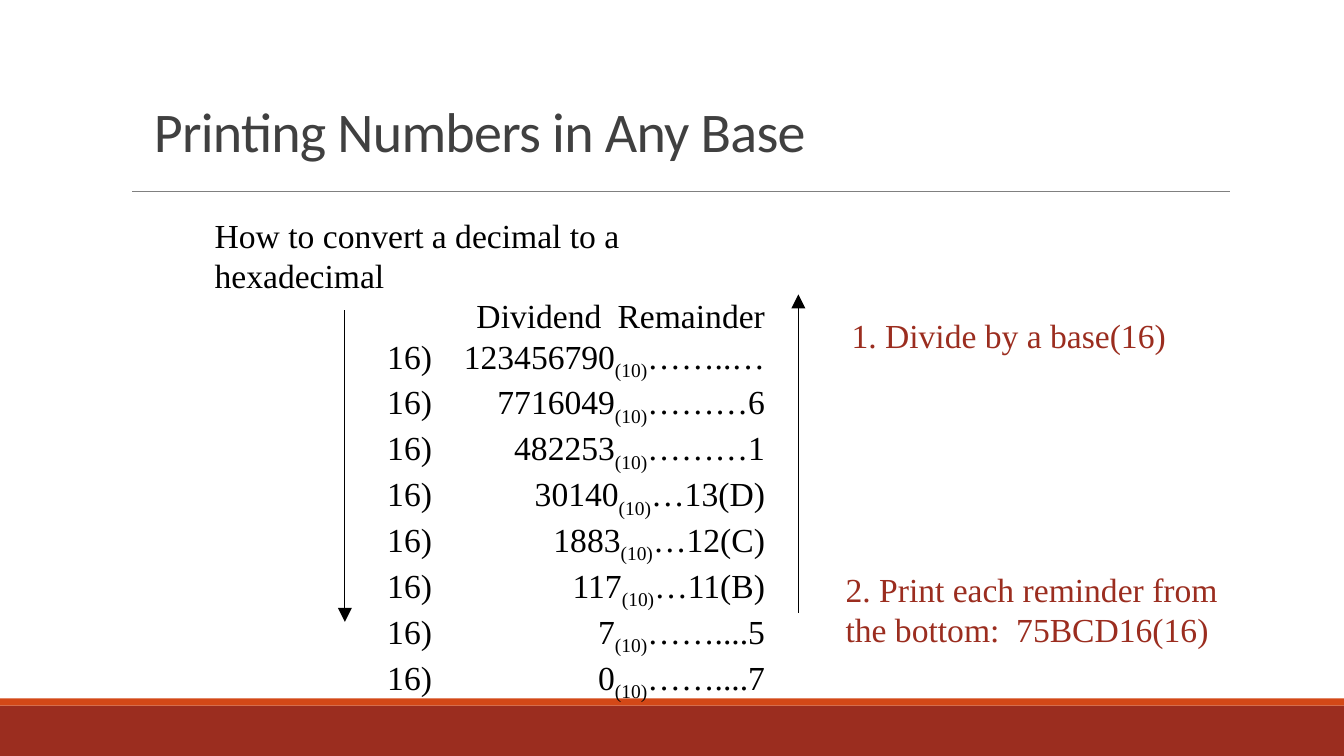
"""Build the slide on converting a decimal number to hexadecimal."""
from dataclasses import dataclass

from lxml.etree import SubElement
from pptx import Presentation
from pptx.dml.color import RGBColor
from pptx.enum.shapes import MSO_CONNECTOR as Connector, MSO_SHAPE as Shape
from pptx.enum.text import MSO_ANCHOR as Anchor
from pptx.oxml.ns import qn
from pptx.util import Cm, Pt

BLACK = RGBColor(0x00, 0x00, 0x00)
GREY = RGBColor(0x80, 0x80, 0x80)
CHARCOAL = RGBColor(0x40, 0x40, 0x40)
BRICK = RGBColor(0x9B, 0x2D, 0x1F)
ORANGE = RGBColor(0xD3, 0x48, 0x17)

SLIDE_WIDTH, SLIDE_HEIGHT = 33.87, 19.05
DIVISOR_TAB = (4.35, "l")
DIVIDEND_TAB = (9.75, "r")
REMAINDER_TAB = (13.87, "r")


@dataclass(frozen=True)
class Band:
    top: float
    height: float
    color: RGBColor


@dataclass(frozen=True)
class Rule:
    start: tuple[float, float]
    end: tuple[float, float]
    color: RGBColor
    weight: float
    arrow: bool


@dataclass(frozen=True)
class Note:
    left: float
    top: float
    width: float
    height: float
    lines: tuple[str, ...]


@dataclass(frozen=True)
class Division:
    dividend: str
    remainder: str


BANDS = (Band(17.78, 1.27, BRICK), Band(17.6, 0.18, ORANGE))
RULES = (
    Rule((3.33, 4.83), (31, 4.83), GREY, 0.5, False),
    Rule((8.69, 7.82), (8.69, 15.67), BLACK, 0.75, True),
    Rule((20.12, 15.44), (20.12, 7.42), BLACK, 0.75, True),
)
NOTES = (
    Note(21.21, 7.82, 9.37, 1.27, ("1. Divide by a base(16)",)),
    Note(21.06, 14.2, 10.08, 2.31,
         ("2. Print each reminder from", "the bottom:  75BCD16(16)")),
)
DIVISIONS = (
    Division("123456790", "……..…"),
    Division("7716049", "………6"),
    Division("482253", "………1"),
    Division("30140", "…13(D)"),
    Division("1883", "…12(C)"),
    Division("117", "…11(B)"),
    Division("7", "……....5"),
    Division("0", "……....7"),
)


def draw_band(slide, band: Band) -> None:
    strip = slide.shapes.add_shape(
        Shape.RECTANGLE, 0, Cm(band.top), Cm(SLIDE_WIDTH), Cm(band.height))
    strip.shadow.inherit = False
    strip.fill.solid()
    strip.fill.fore_color.rgb = band.color
    strip.line.fill.background()


def draw_rule(slide, rule: Rule) -> None:
    line = slide.shapes.add_connector(
        Connector.STRAIGHT, *map(Cm, rule.start + rule.end))
    line.line.color.rgb = rule.color
    line.line.width = Pt(rule.weight)
    if rule.arrow:
        SubElement(line.line._get_or_add_ln(), qn("a:tailEnd"),
                   type="triangle", w="lg", len="lg")
    SubElement(line._element.spPr, qn("a:effectLst"))


def add_text_frame(slide, left: float, top: float, width: float, height: float):
    frame = slide.shapes.add_textbox(
        Cm(left), Cm(top), Cm(width), Cm(height)).text_frame
    frame.word_wrap = True
    return frame


def style_text(frame, color: RGBColor, size: float = 24,
               typeface: str = "Times New Roman") -> None:
    for paragraph in frame.paragraphs:
        for run in paragraph.runs:
            run.font.name = typeface
            run.font.size = Pt(size)
            run.font.color.rgb = color


def set_tabs(paragraph, *stops: tuple[float, str]) -> None:
    tab_list = SubElement(paragraph._p.get_or_add_pPr(), qn("a:tabLst"))
    for position, side in stops:
        SubElement(tab_list, qn("a:tab"), pos=str(Cm(position)), algn=side)


def draw_title(slide) -> None:
    frame = add_text_frame(slide, 3.63, 1.14, 21.59, 3.12)
    frame.vertical_anchor = Anchor.BOTTOM
    frame.text = "Printing Numbers in Any Base"
    title = frame.paragraphs[0]
    title.line_spacing = 0.85
    style_text(frame, CHARCOAL, 40, "Calibri")
    title.runs[0]._r.get_or_add_rPr().set("spc", "-50")


def draw_note(slide, note: Note) -> None:
    frame = add_text_frame(slide, note.left, note.top, note.width, note.height)
    frame.text = "\n".join(note.lines)
    style_text(frame, BRICK)


def add_division(frame, division: Division) -> None:
    row = frame.add_paragraph()
    row.text = f"\t16)\t{division.dividend}"
    base = row.add_run()
    base.text = "(10)"
    base._r.get_or_add_rPr().set("baseline", "-25000")
    row.add_run().text = division.remainder
    set_tabs(row, DIVISOR_TAB, REMAINDER_TAB)


def draw_conversion(slide) -> None:
    frame = add_text_frame(slide, 5.16, 5.28, 14.4, 11.56)
    frame.text = "How to convert a decimal to a hexadecimal"
    heading = frame.add_paragraph()
    heading.text = "\tDividend\tRemainder"
    set_tabs(heading, DIVIDEND_TAB, REMAINDER_TAB)
    for division in DIVISIONS:
        add_division(frame, division)
    style_text(frame, BLACK)


def main() -> None:
    deck = Presentation()
    deck.slide_width, deck.slide_height = Cm(SLIDE_WIDTH), Cm(SLIDE_HEIGHT)
    slide = deck.slides.add_slide(deck.slide_layouts[6])
    for band in BANDS:
        draw_band(slide, band)
    draw_title(slide)
    draw_conversion(slide)
    for rule in RULES:
        draw_rule(slide, rule)
    for note in NOTES:
        draw_note(slide, note)
    deck.save("out.pptx")


if __name__ == "__main__":
    main()
